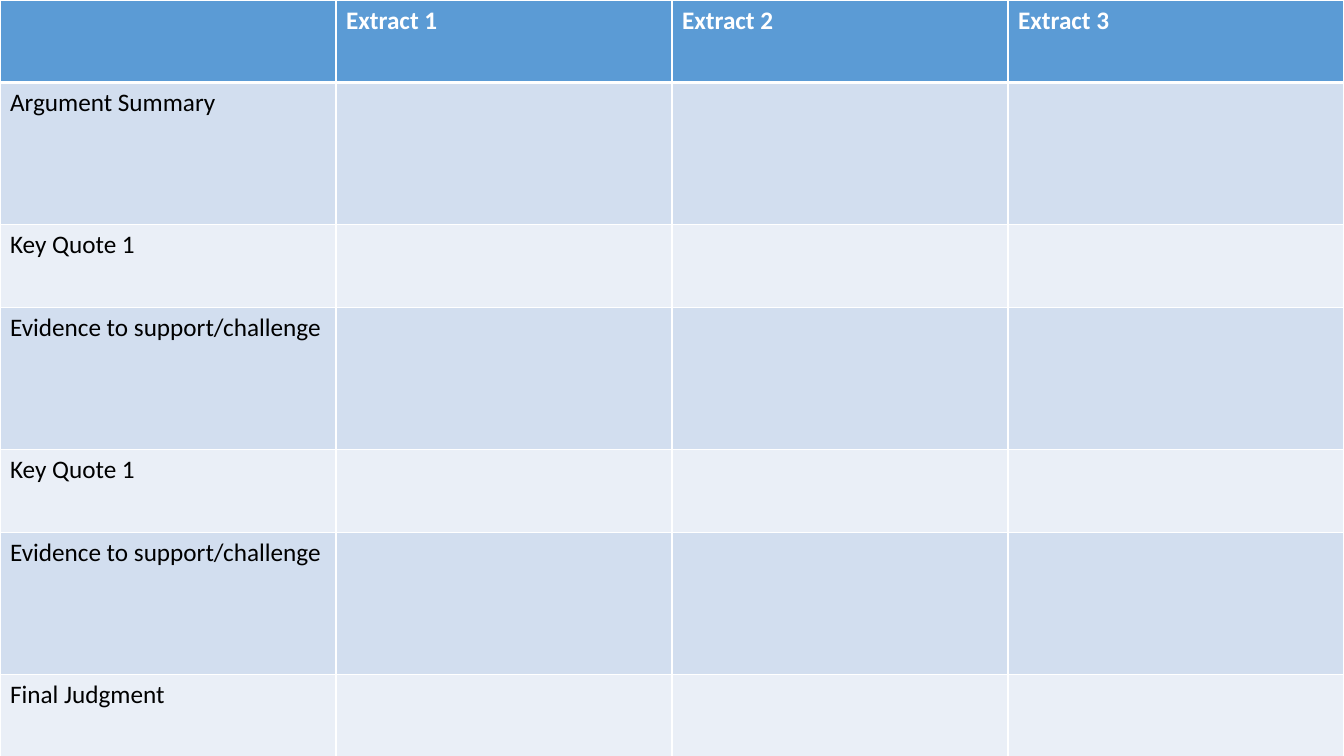
import pptx
import pptx.util
import pptx.dml.color
import pptx.oxml.ns
import lxml.etree

WIDE, HIGH = 13.33, 7.5
HEADS = ["", "Extract 1", "Extract 2", "Extract 3"]
SHORT, TALL = 0.82, 1.41
ROWS = [
    ("Argument Summary", TALL),
    ("Key Quote 1", SHORT),
    ("Evidence to support/challenge", TALL),
    ("Key Quote 1", SHORT),
    ("Evidence to support/challenge", TALL),
    ("Final Judgment", SHORT),
]
BLUE, BANDS = "5B9BD5", ("D2DEEF", "EAEFF7")
WHITE, BLACK = "FFFFFF", "000000"
FONT, SIZE = "Calibri", 18

Inches, Pt = pptx.util.Inches, pptx.util.Pt
qn = pptx.oxml.ns.qn


def color(code):
    return pptx.dml.color.RGBColor.from_string(code)


def edge(cell, side, width):
    """Add a white border; sides must come in the order L, R, T, B."""
    props = cell._tc.get_or_add_tcPr()
    line = lxml.etree.SubElement(props, qn("a:ln" + side), w=str(Pt(width)))
    fill = lxml.etree.SubElement(line, qn("a:solidFill"))
    lxml.etree.SubElement(fill, qn("a:srgbClr"), val=WHITE)


def style(cell, text, fill, ink, bold, top, bottom):
    for side, width in (("L", 1), ("R", 1), ("T", top), ("B", bottom)):
        edge(cell, side, width)
    cell.fill.solid()
    cell.fill.fore_color.rgb = color(fill)
    para = cell.text_frame.paragraphs[0]
    para.font.size = Pt(SIZE)
    if text:
        run = para.add_run()
        run.text = text
        run.font.name = FONT
        run.font.size = Pt(SIZE)
        run.font.bold = bold
        run.font.color.rgb = color(ink)


def main():
    deck = pptx.Presentation()
    deck.slide_width, deck.slide_height = Inches(WIDE), Inches(HIGH)
    slide = deck.slides.add_slide(deck.slide_layouts[6])
    grid = slide.shapes.add_table(
        len(ROWS) + 1, len(HEADS), 0, 0, Inches(WIDE), Inches(HIGH)
    ).table
    grid.horz_banding = False

    for col in grid.columns:
        col.width = Inches(WIDE / len(HEADS))
    grid.rows[0].height = Inches(SHORT)
    for c, head in enumerate(HEADS):
        style(grid.cell(0, c), head, BLUE, WHITE, True, 1, 3)

    for r, (label, height) in enumerate(ROWS, 1):
        grid.rows[r].height = Inches(height)
        band = BANDS[(r - 1) % 2]
        top = 3 if r == 1 else 1
        for c in range(len(HEADS)):
            text = label if c == 0 else ""
            style(grid.cell(r, c), text, band, BLACK, False, top, 1)

    deck.save("out.pptx")


if __name__ == "__main__":
    main()
